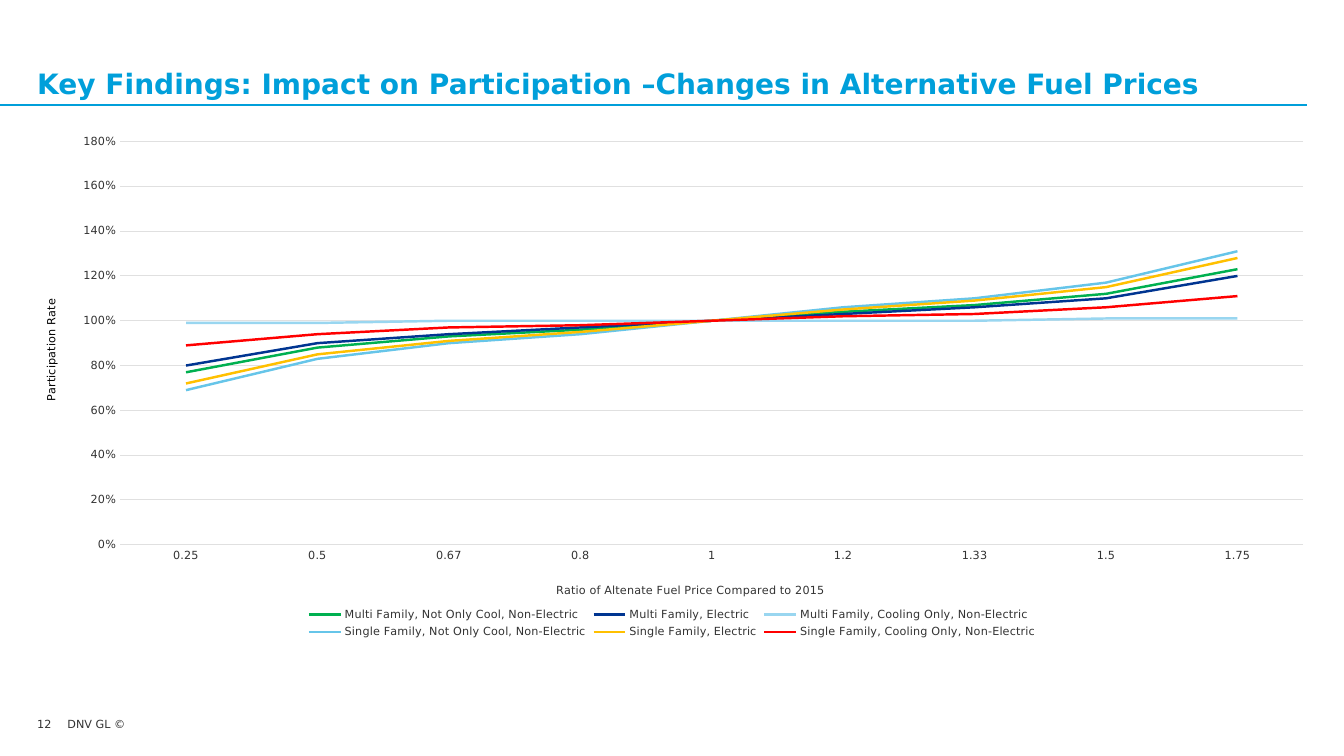
from lxml.etree import SubElement as Sub
from pptx import Presentation
from pptx.chart.data import CategoryChartData as Data
from pptx.dml.color import RGBColor as Rgb
from pptx.enum.chart import XL_CHART_TYPE as Kind, XL_LEGEND_POSITION as Spot, XL_TICK_MARK as Tick
from pptx.enum.shapes import MSO_CONNECTOR as Link
from pptx.enum.text import MSO_ANCHOR as Anchor, MSO_AUTO_SIZE as Fit, PP_ALIGN as Align
from pptx.oxml.ns import qn
from pptx.util import Pt

FACE = "DejaVu Sans"
HUES = {
    "brand": "009FDA", "text": "333333", "black": "000000", "grid": "E0E0E0",
    "green": "00B050", "navy": "003591", "pale": "99D6F0",
    "sky": "66C5E9", "gold": "FFC000", "red": "FF0000",
}
RATIOS = ["0.25", "0.5", "0.67", "0.8", "1", "1.2", "1.33", "1.5", "1.75"]
RATES = [
    ("Multi Family, Not Only Cool, Non-Electric", "green",
     [0.77, 0.88, 0.93, 0.96, 1, 1.04, 1.07, 1.12, 1.23]),
    ("Multi Family, Electric", "navy",
     [0.8, 0.9, 0.94, 0.97, 1, 1.03, 1.06, 1.1, 1.2]),
    ("Multi Family, Cooling Only, Non-Electric", "pale",
     [0.99, 0.99, 1, 1, 1, 1, 1, 1.01, 1.01]),
    ("Single Family, Not Only Cool, Non-Electric", "sky",
     [0.69, 0.83, 0.9, 0.94, 1, 1.06, 1.1, 1.17, 1.31]),
    ("Single Family, Electric", "gold",
     [0.72, 0.85, 0.91, 0.95, 1, 1.05, 1.09, 1.15, 1.28]),
    ("Single Family, Cooling Only, Non-Electric", "red",
     [0.89, 0.94, 0.97, 0.98, 1, 1.02, 1.03, 1.06, 1.11]),
]


def apply(item, form):
    for key, val in form.items():
        setattr(item, key, val)


def hue(name):
    return Rgb.from_string(HUES[name])


def style(font, size, tint, bold=False):
    apply(font, {"name": FACE, "size": Pt(size), "bold": bold})
    font.color.rgb = hue(tint)


def rule(line, tint, width):
    line.color.rgb = hue(tint)
    line.width = Pt(width)


def write(frame, text, size, tint, bold=False, anchor=Anchor.TOP, wrap=True):
    apply(frame, {
        "text": text, "word_wrap": wrap, "vertical_anchor": anchor, "auto_size": Fit.NONE,
        "margin_left": 0, "margin_top": 0, "margin_right": 0, "margin_bottom": 0,
    })
    para = frame.paragraphs[0]
    para.alignment = Align.LEFT
    style(para.runs[0].font, size, tint, bold)


def place(node, index, form):
    old = node.find(qn("c:layout"))
    if old is not None:
        node.remove(old)
    layout = node.makeelement(qn("c:layout"))
    node.insert(index, layout)
    manual = Sub(layout, qn("c:manualLayout"))
    for key, val in form.items():
        Sub(manual, qn("c:" + key)).set("val", str(val))


def header(slide, left, top, width, height):
    title = slide.shapes.title
    apply(title, {"left": Pt(left), "top": Pt(top), "width": Pt(width), "height": Pt(height)})
    write(title.text_frame, "Key Findings: Impact on Participation –Changes in Alternative Fuel Prices",
          20, "brand", True, Anchor.BOTTOM)
    base = Pt(top + height + 3.5)
    line = slide.shapes.add_connector(Link.STRAIGHT, 0, base, Pt(left + width), base)
    rule(line.line, "brand", 1.25)
    Sub(line._element.spPr, qn("a:effectLst"))


def footer(slide, left, top, width, height):
    number = 21.6
    parts = [("12", left, number, True), ("DNV GL ©", left + number, width - number, False)]
    for text, start, span, wrap in parts:
        box = slide.shapes.add_textbox(Pt(start), Pt(top), Pt(span), Pt(height))
        write(box.text_frame, text, 8, "text", wrap=wrap)


def label(axis, text, tint, x, y):
    frame = axis.axis_title.text_frame
    frame.text = text
    style(frame.paragraphs[0].runs[0].font, 8, tint)
    place(axis.axis_title._element, 1, {"xMode": "edge", "yMode": "edge", "x": x, "y": y})


def graph(slide, left, top, width, height):
    data = Data(number_format="0%")
    data.categories = RATIOS
    for name, _, values in RATES:
        data.add_series(name, values)
    chart = slide.shapes.add_chart(
        Kind.LINE, Pt(left), Pt(top), Pt(width), Pt(height), data).chart
    apply(chart, {"has_title": False, "has_legend": True})
    style(chart.font, 8, "text")
    apply(chart.legend, {"position": Spot.BOTTOM, "include_in_layout": False})
    style(chart.legend.font, 8, "text")
    plot = chart.plots[0]
    plot.vary_by_categories = False
    for line, (_, tint, _) in zip(plot.series, RATES):
        line.smooth = False
        rule(line.format.line, tint, 1.75)

    cats, vals = chart.category_axis, chart.value_axis
    for axis in (cats, vals):
        apply(axis, {"major_tick_mark": Tick.NONE, "minor_tick_mark": Tick.NONE})
        style(axis.tick_labels.font, 8, "text")
    rule(cats.format.line, "grid", 0.75)
    vals.format.line.fill.background()
    apply(vals, {"minimum_scale": 0, "maximum_scale": 1.8, "major_unit": 0.2,
                 "has_major_gridlines": True})
    rule(vals.major_gridlines.format.line, "grid", 0.75)
    apply(vals.tick_labels, {"number_format": "0%", "number_format_is_linked": False})
    label(cats, "Ratio of Altenate Fuel Price Compared to 2015", "text", 0.41, 0.88)
    label(vals, "Participation Rate", "black", 0.02, 0.33)
    area = chart._chartSpace.chart.plotArea
    place(area, 0, {"layoutTarget": "inner", "xMode": "edge", "yMode": "edge",
                    "x": 0.08, "y": 0.03, "w": 0.9, "h": 0.78})


def main():
    deck = Presentation()
    apply(deck, {"slide_width": Pt(960), "slide_height": Pt(540)})
    slide = deck.slides.add_slide(deck.slide_layouts[5])
    header(slide, 26.6, 18.7, 907.2, 52.6)
    graph(slide, 10.8, 90, 938.9, 369.4)
    footer(slide, 26.6, 512.6, 64, 14.4)
    deck.save("out.pptx")


if __name__ == "__main__":
    main()
